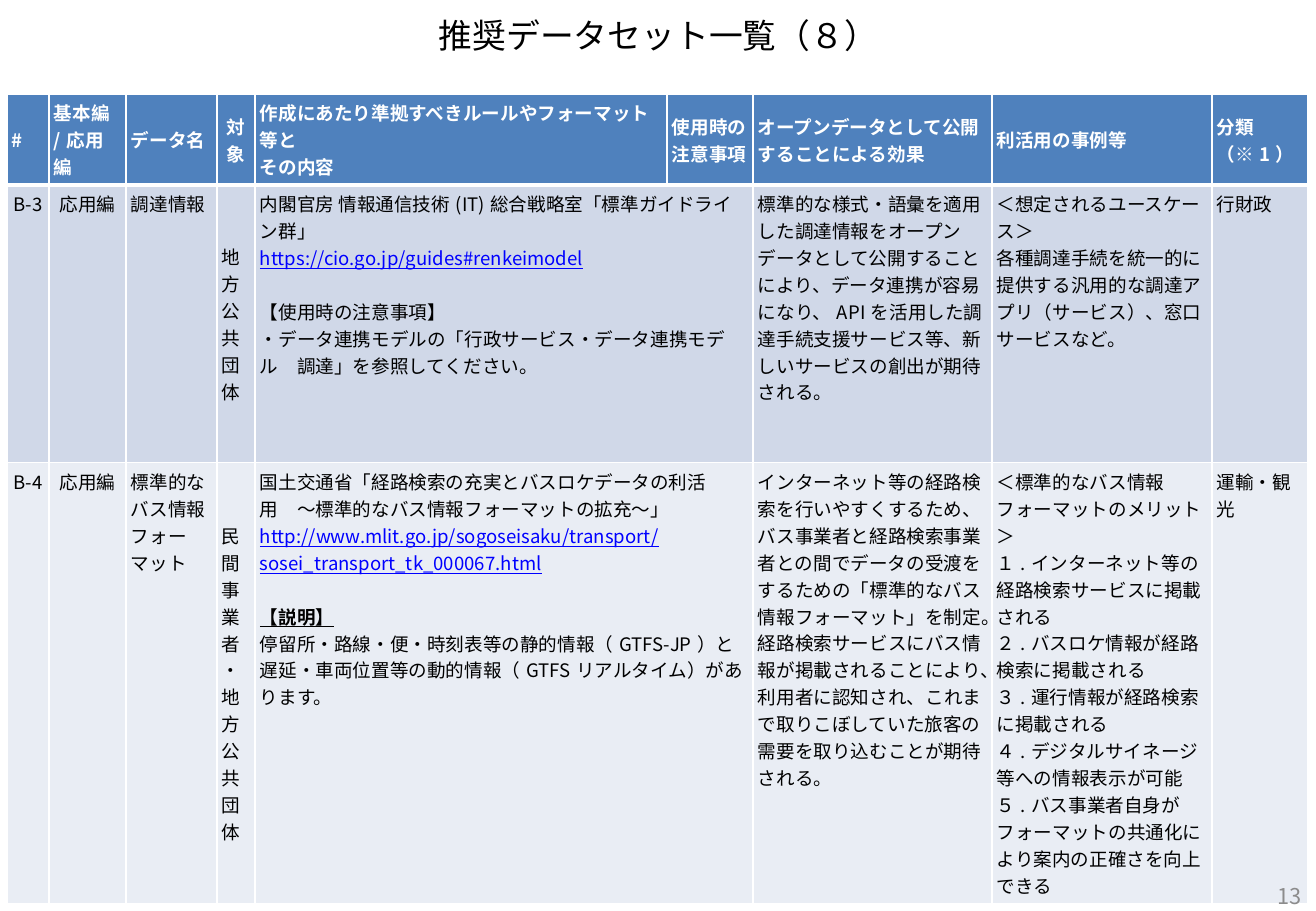
from lxml import etree
from pptx import Presentation
from pptx import util as u
from pptx.dml.color import RGBColor
from pptx.enum import text
from pptx.oxml.ns import qn

COLORS = {"ink": "000000", "white": "FFFFFF", "header": "4F81BD", "odd": "D0D8E8",
          "even": "E9EDF4", "link": "0000FF", "page": "8C8C8C"}
FONT = "Noto Sans CJK JP"
SCALE = u.Inches(1) / 121.5
CENTER = text.PP_ALIGN.CENTER
MIDDLE = text.MSO_ANCHOR.MIDDLE


def px(n):
    return u.Emu(round(n * SCALE))


def write(p, content, size=11, color="ink", bold=False, underline=False, align=None, before=0):
    if align is not None:
        p.alignment = align
    if before:
        p.space_before = u.Pt(before)
    r = p.add_run()
    r.text = content
    r.font.size, r.font.bold, r.font.underline = u.Pt(size), bold, underline
    r.font.name = FONT
    r.font.color.rgb = RGBColor.from_string(COLORS[color])
    etree.SubElement(r.font._element, qn("a:ea")).set("typeface", FONT)


class Deck:
    def __init__(self, width, height):
        self.prs = Presentation()
        self.prs.slide_width, self.prs.slide_height = px(width), px(height)
        self.s = self.prs.slides.add_slide(self.prs.slide_layouts[5])

    def title(self, box, content):
        sp = self.s.shapes.title
        sp.left, sp.top, sp.width, sp.height = map(px, box)
        sp.text_frame.vertical_anchor = MIDDLE
        write(sp.text_frame.paragraphs[0], content, size=20, align=CENTER)

    def page_number(self, box, content):
        tf = self.s.shapes.add_textbox(*map(px, box)).text_frame
        tf.word_wrap = True
        tf.vertical_anchor = MIDDLE
        write(tf.paragraphs[0], content, size=12.9, color="page", align=text.PP_ALIGN.RIGHT)

    def table(self, left, top, widths, heights, rows):
        frame = self.s.shapes.add_table(len(rows), len(widths), px(left), px(top),
                                        px(sum(widths)), px(sum(heights)))
        table = frame.table
        for column, width in zip(table.columns, widths):
            column.width = px(width)
        for row, height in zip(table.rows, heights):
            row.height = px(height)
        for i, row in enumerate(rows):
            for j, content in enumerate(row):
                self.cell(table.cell(i, j), i, j, content)
            if i:
                table.cell(i, 4).merge(table.cell(i, 5))

    def cell(self, cell, i, j, content):
        head, vertical = i == 0, j == 3
        cell.margin_left = cell.margin_right = cell.margin_top = cell.margin_bottom = px(5)
        cell.vertical_anchor = MIDDLE if head or vertical else text.MSO_ANCHOR.TOP
        tc_pr = cell._tc.get_or_add_tcPr()
        if vertical:
            tc_pr.set("vert", "eaVert")
        for side in "LRTB":
            thick = (i, side) in ((0, "B"), (1, "T"))
            ln = etree.SubElement(tc_pr, qn(f"a:ln{side}"), w=str(u.Pt(3 if thick else 1)))
            fill = etree.SubElement(ln, qn("a:solidFill"))
            etree.SubElement(fill, qn("a:srgbClr"), val=COLORS["white"])
        cell.fill.solid()
        cell.fill.fore_color.rgb = RGBColor.from_string(COLORS[("header", "odd", "even")[i]])
        centered = vertical if head else j < 2
        base = {"color": "white" if head else "ink", "bold": head,
                "align": CENTER if centered else None}
        tf = cell.text_frame
        for k, item in enumerate(content):
            line, extra = item if isinstance(item, tuple) else (item, {})
            p = tf.add_paragraph() if k else tf.paragraphs[0]
            write(p, line, **{**base, **extra})


LINK = {"color": "link", "underline": True}
GAP = {"before": 16}
HEADER = [
    ["#"], ["基本編", "/応用編"], ["データ名"], ["対象"],
    ["作成にあたり準拠すべきルールやフォーマット等と", "その内容"],
    ["使用時の注意事項"], ["オープンデータとして公開することによる効果"],
    ["利活用の事例等"], ["分類（※1）"],
]
PROCUREMENT = [
    ["B-3"], ["応用編"], ["調達情報"], ["地方公共団体"],
    ["内閣官房 情報通信技術(IT)総合戦略室「標準ガイドライン群」",
     ("https://cio.go.jp/guides#renkeimodel", LINK),
     ("【使用時の注意事項】", GAP),
     "・データ連携モデルの「行政サービス・データ連携モデル　調達」を参照してください。"],
    [],
    ["標準的な様式・語彙を適用した調達情報をオープンデータとして公開することにより、"
     "データ連携が容易になり、APIを活用した調達手続支援サービス等、"
     "新しいサービスの創出が期待される。"],
    ["＜想定されるユースケース＞",
     "各種調達手続を統一的に提供する汎用的な調達アプリ（サービス）、窓口サービスなど。"],
    ["行財政"],
]
BUS = [
    ["B-4"], ["応用編"], ["標準的なバス情報フォーマット"], ["民間事業者・地方公共団体"],
    ["国土交通省「経路検索の充実とバスロケデータの利活用　～標準的なバス情報フォーマットの拡充～」",
     ("http://www.mlit.go.jp/sogoseisaku/transport/sosei_transport_tk_000067.html", LINK),
     ("【説明】", {**GAP, "bold": True, "underline": True}),
     "停留所・路線・便・時刻表等の静的情報（GTFS-JP）と",
     "遅延・車両位置等の動的情報（GTFSリアルタイム）があります。"],
    [],
    ["インターネット等の経路検索を行いやすくするため、バス事業者と経路検索事業者との間で"
     "データの受渡をするための「標準的なバス情報フォーマット」を制定。",
     "経路検索サービスにバス情報が掲載されることにより、利用者に認知され、"
     "これまで取りこぼしていた旅客の需要を取り込むことが期待される。"],
    ["＜標準的なバス情報フォーマットのメリット＞",
     "１.インターネット等の経路検索サービスに掲載される",
     "２.バスロケ情報が経路検索に掲載される",
     "３.運行情報が経路検索に掲載される",
     "４.デジタルサイネージ等への情報表示が可能",
     "５.バス事業者自身がフォーマットの共通化により案内の正確さを向上できる"],
    ["運輸・観光"],
]


def main():
    deck = Deck(1316, 911)
    deck.title((66, 1, 1185, 69), "推奨データセット一覧（８）")
    deck.table(7, 94, [42, 77, 91, 38, 412, 86, 239, 220, 96], [33, 278, 371],
               [HEADER, PROCUREMENT, BUS])
    deck.page_number((1006, 880, 307, 32), "13")
    deck.prs.save("out.pptx")


if __name__ == "__main__":
    main()
